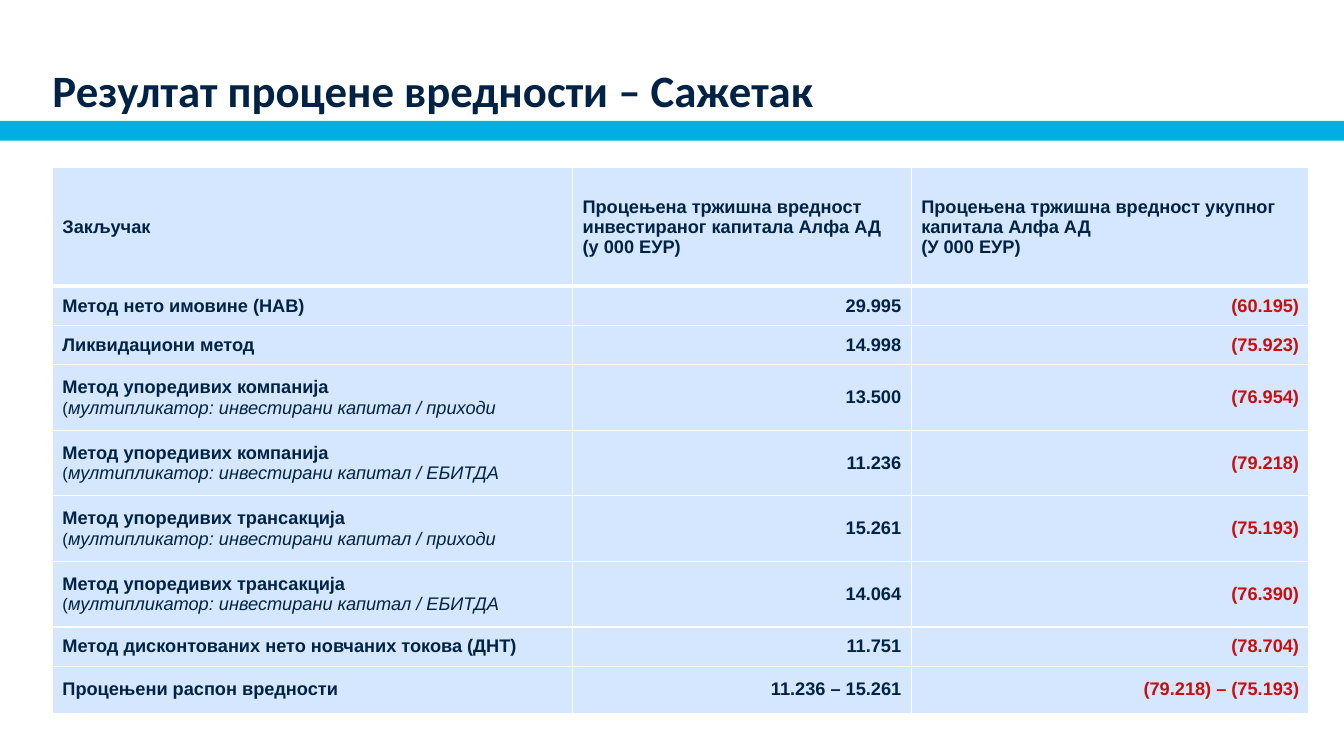
"""Builds the valuation summary slide with its table of methods and values."""
import dataclasses

import lxml.etree
import pptx
import pptx.dml.color
import pptx.enum.shapes
import pptx.enum.text
import pptx.oxml.ns
import pptx.util

ANCHOR = pptx.enum.text.MSO_ANCHOR
ALIGN = pptx.enum.text.PP_ALIGN


@dataclasses.dataclass(frozen=True)
class Theme:
    ink: str = "002345"
    loss: str = "C80F0F"
    band: str = "00ADE4"
    cell: str = "D4E7FE"
    rule: str = "FFFFFF"
    title_font: str = "Calibri"
    table_font: str = "Arial"
    title_size: int = 32
    table_size: int = 13
    bracket_size: int = 12
    thin_rule: int = 1
    thick_rule: int = 3


class SummarySlide:
    def __init__(self, deck, theme):
        self.deck = deck
        self.theme = theme
        self.page = deck.slides.add_slide(deck.slide_layouts[6])

    def across(self, percent):
        return round(self.deck.slide_width * percent / 100)

    def down(self, percent):
        return round(self.deck.slide_height * percent / 100)

    def area(self, left, top, width, height):
        return self.across(left), self.down(top), self.across(width), self.down(height)

    def color(self, name):
        return pptx.dml.color.RGBColor.from_string(name)

    def style(self, span, font, size, color, bold=True, italic=False):
        span.font.name = font
        span.font.size = pptx.util.Pt(size)
        span.font.color.rgb = self.color(color)
        span.font.bold = bold
        span.font.italic = italic

    def band(self, *place):
        shape = self.page.shapes.add_shape(
            pptx.enum.shapes.MSO_SHAPE.RECTANGLE, *self.area(*place))
        shape.shadow.inherit = False
        shape.fill.solid()
        shape.fill.fore_color.rgb = self.color(self.theme.band)
        shape.line.fill.background()

    def title(self, text, *place):
        frame = self.page.shapes.add_textbox(*self.area(*place)).text_frame
        frame.word_wrap = True
        frame.vertical_anchor = ANCHOR.BOTTOM
        frame.margin_left = frame.margin_right = 0
        frame.margin_top = frame.margin_bottom = 0
        frame.text = text
        self.style(frame.paragraphs[0].runs[0], self.theme.title_font,
                   self.theme.title_size, self.theme.ink)

    def borders(self, cell, top, bottom):
        properties = cell._tc.get_or_add_tcPr()
        thin = self.theme.thin_rule
        edges = {"a:lnL": thin, "a:lnR": thin, "a:lnT": top, "a:lnB": bottom}
        for position, (edge, points) in enumerate(edges.items()):
            line = lxml.etree.Element(pptx.oxml.ns.qn(edge), w=str(pptx.util.Pt(points)))
            fill = lxml.etree.SubElement(line, pptx.oxml.ns.qn("a:solidFill"))
            lxml.etree.SubElement(fill, pptx.oxml.ns.qn("a:srgbClr"), val=self.theme.rule)
            properties.insert(position, line)

    def cell(self, cell, text, color, align):
        cell.fill.solid()
        cell.fill.fore_color.rgb = self.color(self.theme.cell)
        cell.vertical_anchor = ANCHOR.MIDDLE
        cell.text_frame.text = text
        for para in cell.text_frame.paragraphs:
            para.alignment = align
            for span in para.runs:
                self.style(span, self.theme.table_font, self.theme.table_size, color)

    def multiplier(self, cell, text):
        para = cell.text_frame.add_paragraph()
        para.text = "("
        self.style(para.runs[0], self.theme.table_font, self.theme.bracket_size,
                   self.theme.ink, bold=False)
        span = para.add_run()
        span.text = text
        self.style(span, self.theme.table_font, self.theme.table_size,
                   self.theme.ink, bold=False, italic=True)

    def table(self, header, results, left, top, widths, heights):
        theme = self.theme
        table = self.page.shapes.add_table(
            len(heights), len(widths),
            *self.area(left, top, sum(widths), sum(heights))).table
        table.first_row = table.horz_banding = False
        for column, width in zip(table.columns, widths):
            column.width = self.across(width)
        for row, height in zip(table.rows, heights):
            row.height = self.down(height)
        for column, text in enumerate(header):
            self.cell(table.cell(0, column), text, theme.ink, ALIGN.LEFT)
        for row, (method, multiplier, invested, equity) in enumerate(results, 1):
            self.cell(table.cell(row, 0), method, theme.ink, ALIGN.LEFT)
            self.cell(table.cell(row, 1), invested, theme.ink, ALIGN.RIGHT)
            self.cell(table.cell(row, 2), equity, theme.loss, ALIGN.RIGHT)
            if multiplier:
                self.multiplier(table.cell(row, 0), multiplier)
        for index, row in enumerate(table.rows):
            above = theme.thick_rule if index == 1 else theme.thin_rule
            below = theme.thick_rule if index == 0 else theme.thin_rule
            for cell in row.cells:
                self.borders(cell, above, below)


HEADER = (
    "Закључак",
    "Процењена тржишна вредност\nинвестираног капитала Алфа АД\v(у 000 ЕУР)",
    "Процењена тржишна вредност укупног\nкапитала Алфа АД\n(У 000 ЕУР)",
)
COMPANIES = "Метод упоредивих компанија"
TRANSACTIONS = "Метод упоредивих трансакција"
REVENUE = "мултипликатор: инвестирани капитал / приходи"
EBITDA = "мултипликатор: инвестирани капитал / ЕБИТДА"
RESULTS = (
    ("Метод нето имовине (НАВ)", None, "29.995", "(60.195)"),
    ("Ликвидациони метод", None, "14.998", "(75.923)"),
    (COMPANIES, REVENUE, "13.500", "(76.954)"),
    (COMPANIES, EBITDA, "11.236", "(79.218)"),
    (TRANSACTIONS, REVENUE, "15.261", "(75.193)"),
    (TRANSACTIONS, EBITDA, "14.064", "(76.390)"),
    ("Метод дисконтованих нето новчаних токова (ДНТ)", None, "11.751", "(78.704)"),
    ("Процењени распон вредности", None, "11.236 – 15.261", "(79.218) – (75.193)"),
)
COLUMN_WIDTHS = (38.7, 25.2, 29.6)
HEADER_HEIGHT, SINGLE_HEIGHT, DOUBLE_HEIGHT, RANGE_HEIGHT = 15.67, 5.2, 8.67, 6.2


def main():
    deck = pptx.Presentation()
    deck.slide_width = pptx.util.Inches(13.33)
    deck.slide_height = pptx.util.Inches(7.5)
    slide = SummarySlide(deck, Theme())
    slide.band(0, 16, 100, 2.6)
    slide.title("Резултат процене вредности – Сажетак", 3.9, 4.4, 92.6, 11.07)
    methods = [DOUBLE_HEIGHT if result[1] else SINGLE_HEIGHT for result in RESULTS[:-1]]
    slide.table(HEADER, RESULTS, 3.9, 22.2, COLUMN_WIDTHS,
                [HEADER_HEIGHT, *methods, RANGE_HEIGHT])
    deck.save("out.pptx")


if __name__ == "__main__":
    main()
